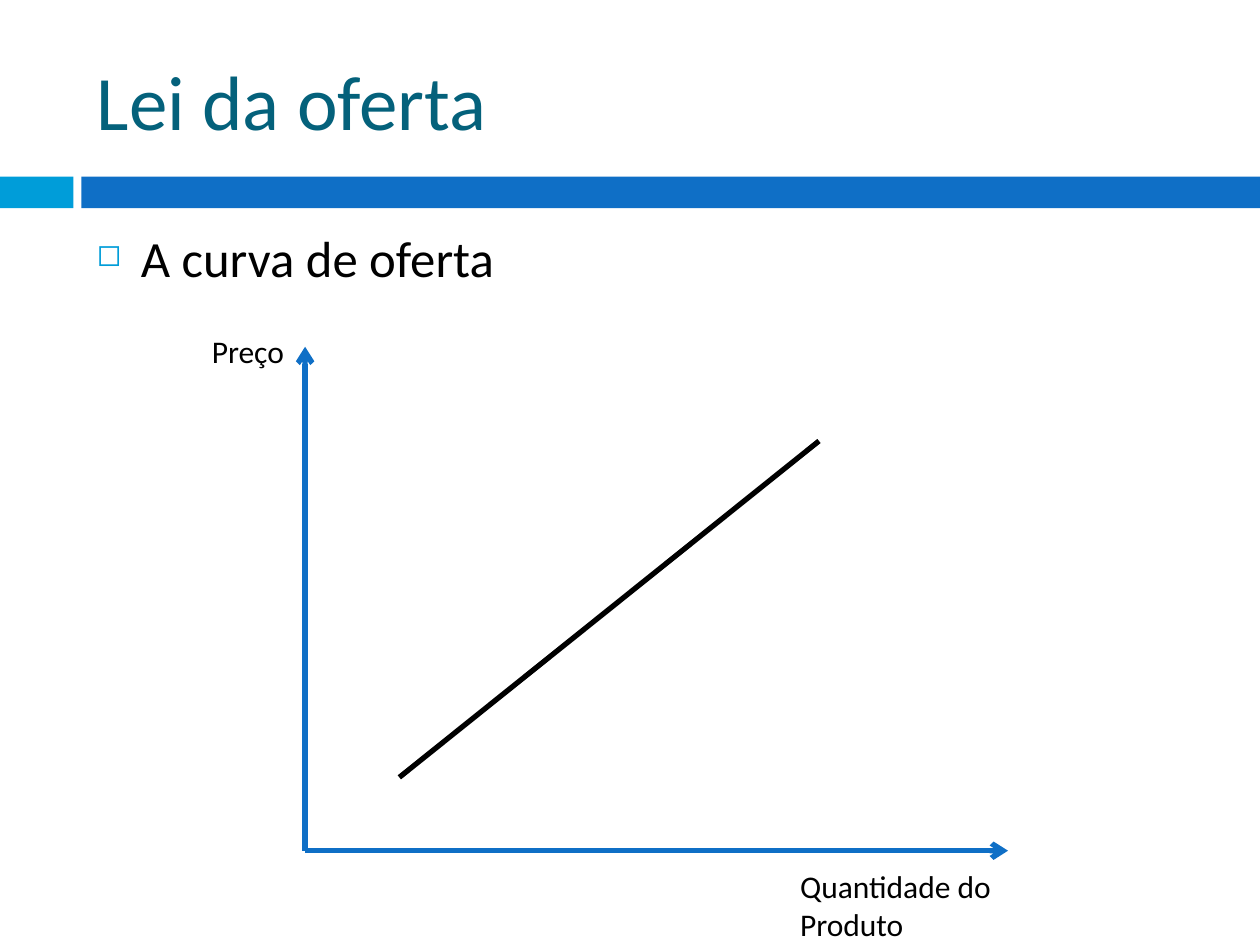
"""Build the supply-law slide with its price and quantity diagram."""
from dataclasses import dataclass

from lxml.etree import SubElement
from pptx import Presentation
from pptx.dml.color import RGBColor
from pptx.enum.shapes import MSO_CONNECTOR as Conn, MSO_SHAPE as Shape
from pptx.enum.text import MSO_ANCHOR as Anchor
from pptx.oxml.ns import qn
from pptx.util import Cm, Pt

BLUE, CYAN, TEAL, BLACK = "0F6FC6", "009DD9", "04617B", "000000"
ORIGIN = (6.15, 17.15)


@dataclass(frozen=True)
class Bar:
    left: float
    width: float
    color: str


@dataclass(frozen=True)
class Label:
    text: str
    box: tuple[float, float, float, float]
    size: float
    color: str = BLACK
    anchor: Anchor = Anchor.TOP
    bullet: bool = False


@dataclass(frozen=True)
class Line:
    start: tuple[float, float]
    end: tuple[float, float]
    color: str
    arrow: bool = False


BARS = [Bar(0, 1.48, CYAN), Bar(1.64, 23.76, BLUE)]
LABELS = [
    Label("Lei da oferta", (1.7, 0.64, 22.65, 2.75), 44, TEAL, Anchor.MIDDLE),
    Label("A curva de oferta", (1.7, 4.45, 22.65, 1.9), 29, bullet=True),
    Label("Preço", (4.02, 6.56, 2.12, 1.03), 18),
    Label("Quantidade do Produto", (15.88, 17.36, 6.5, 1.03), 18),
]
LINES = [
    Line(ORIGIN, (ORIGIN[0], 6.99), BLUE, arrow=True),
    Line(ORIGIN, (20.32, ORIGIN[1]), BLUE, arrow=True),
    Line((8.05, 15.67), (16.51, 8.89), BLACK),
]


def rgb(color: str) -> RGBColor:
    return RGBColor.from_string(color)


def draw_bar(s, bar: Bar) -> None:
    sp = s.shapes.add_shape(Shape.RECTANGLE, Cm(bar.left), Cm(3.56), Cm(bar.width), Cm(0.64))
    sp.shadow.inherit = False
    sp.fill.solid()
    sp.fill.fore_color.rgb = rgb(bar.color)
    sp.line.fill.background()


def add_bullet(p) -> None:
    p.space_before = Pt(7)
    pPr = p._p.get_or_add_pPr()
    pPr.set("marL", str(Cm(0.89)))
    pPr.set("indent", str(-Cm(0.89)))
    SubElement(SubElement(pPr, qn("a:buClr")), qn("a:srgbClr"), val=CYAN)
    SubElement(pPr, qn("a:buSzPct"), val="60000")
    SubElement(pPr, qn("a:buChar"), char="◻")


def draw_label(s, label: Label) -> None:
    tf = s.shapes.add_textbox(*map(Cm, label.box)).text_frame
    tf.word_wrap = True
    tf.vertical_anchor = label.anchor
    p = tf.paragraphs[0]
    p.text = label.text
    font = p.runs[0].font
    font.name, font.size = "Calibri", Pt(label.size)
    font.color.rgb = rgb(label.color)
    if label.bullet:
        add_bullet(p)


def draw_line(s, line: Line) -> None:
    cx = s.shapes.add_connector(Conn.STRAIGHT, *map(Cm, line.start + line.end))
    cx.line.color.rgb = rgb(line.color)
    cx.line.width = Pt(3)
    if line.arrow:
        SubElement(cx.line._get_or_add_ln(), qn("a:tailEnd"), type="arrow")
    SubElement(cx._element.spPr, qn("a:effectLst"))


def main() -> None:
    prs = Presentation()
    prs.slide_width, prs.slide_height = Cm(25.4), Cm(19.05)
    s = prs.slides.add_slide(prs.slide_layouts[6])
    for bar in BARS:
        draw_bar(s, bar)
    for label in LABELS:
        draw_label(s, label)
    for line in LINES:
        draw_line(s, line)
    prs.save("out.pptx")


if __name__ == "__main__":
    main()
